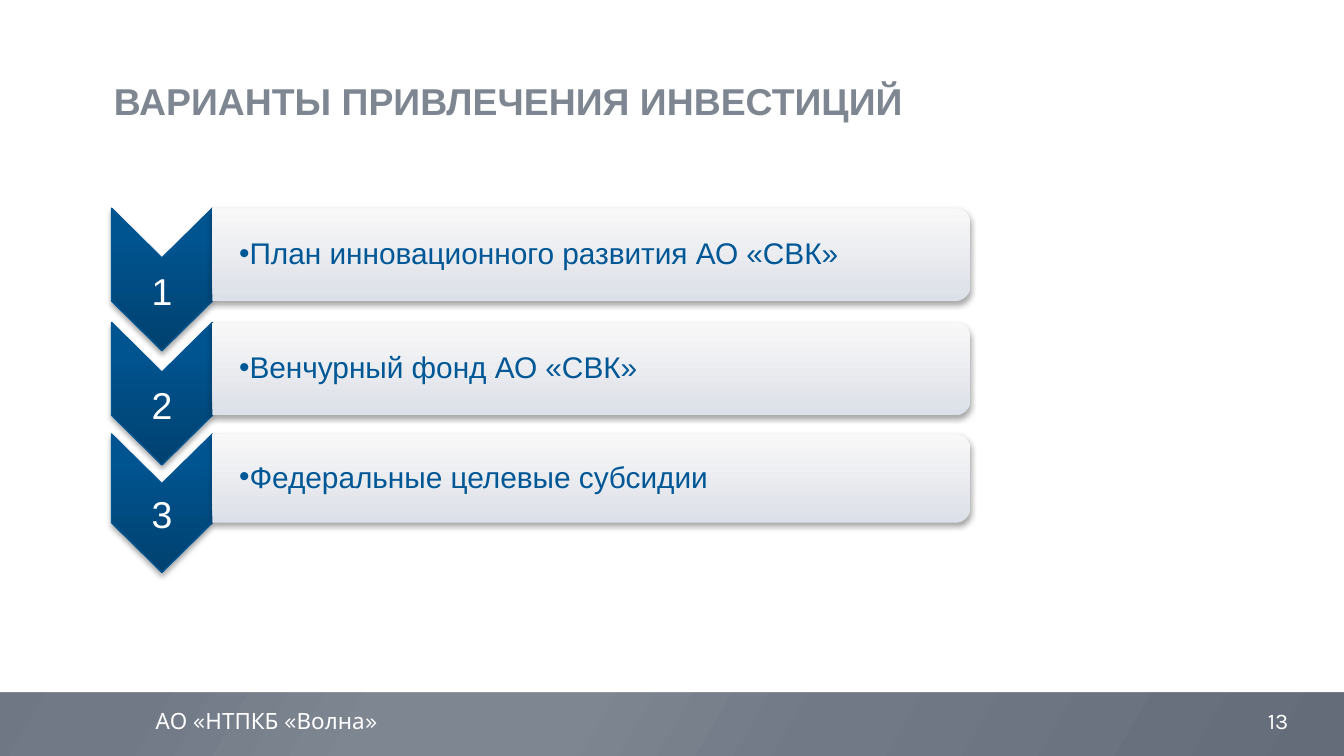
import math
from pptx import Presentation, util as u
from pptx.dml.color import RGBColor
from pptx.enum import shapes, text
from pptx.oxml import parse_xml, ns

# Content
TITLE = "ВАРИАНТЫ ПРИВЛЕЧЕНИЯ ИНВЕСТИЦИЙ"
FIRM = "АО «НТПКБ «Волна»"
PAGE = "13"
ROWS = [  # top, bar height, wording
    (1.55, 0.69, "План инновационного развития АО «СВК»"),
    (2.40, 0.69, "Венчурный фонд АО «СВК»"),
    (3.23, 0.66, "Федеральные целевые субсидии"),
]

# Look
BAND = [(0, "656C7E"), (30, "717986"), (45, "7E8692"),
        (55, "7E8692"), (70, "717986"), (100, "656C79")]
BLUE = [(0, "00416F"), (80, "005490"), (100, "005591")]
GREY = [(0, "DCE0E8"), (100, "F8F8F8")]
HEAD = dict(size=20, name="Arial", color="7E8692", bold=True)
FOOT = dict(size=12, name="Karla", color="FFFFFF")
NUM = dict(size=20, name="Arial", color="FFFFFF")
ITEM = dict(size=16, name="Arial", color="005795")
LEFT, MID, RIGHT = 0.83, 1.58, 7.22
TIP, CURVE = 0.37, 0.11
A = ns.nsdecls("a")

deck = Presentation()
deck.slide_width = u.Inches(10)
deck.slide_height = u.Inches(10 * 9 / 16)
slide = deck.slides.add_slide(deck.slide_layouts[6])


def rgb(code):
    return RGBColor.from_string(code)


def write(shape, words, form, anchor="TOP", align="LEFT", pads=(0.1, 0.05, 0.1, 0.05), bullet=False):
    frame = shape.text_frame
    frame.word_wrap = True
    frame.vertical_anchor = getattr(text.MSO_ANCHOR, anchor)
    for side, pad in zip(("left", "top", "right", "bottom"), pads):
        setattr(frame, "margin_" + side, u.Inches(pad))
    par = frame.paragraphs[0]
    par.alignment = getattr(text.PP_ALIGN, align)
    if bullet:
        par.level = 1
        prop = par._p.get_or_add_pPr()
        prop.set("marL", "0")
        prop.set("indent", str(u.Inches(-0.19)))
        prop.append(parse_xml(f'<a:buFont {A} typeface="Arial"/>'))
        prop.append(parse_xml(f'<a:buChar {A} char="•"/>'))
    run = par.add_run()
    run.text = words
    for key, val in form.items():
        if key == "color":
            run.font.color.rgb = rgb(val)
        else:
            setattr(run.font, key, u.Pt(val) if key == "size" else val)
    return par


def label(box, *args, **more):
    write(slide.shapes.add_textbox(*map(u.Inches, box)), *args, **more)


def shade(shape, stops, angle):
    marks = "".join(f'<a:gs pos="{pos * 1000}"><a:srgbClr val="{code}"/></a:gs>'
                    for pos, code in stops)
    shape._element.spPr.insert(2, parse_xml(
        f'<a:gradFill {A} rotWithShape="1"><a:gsLst>{marks}</a:gsLst>'
        f'<a:lin ang="{angle * 60000}" scaled="0"/></a:gradFill>'))


def panel(height):
    shape = slide.shapes.add_shape(shapes.MSO_SHAPE.RECTANGLE, 0, 0,
                                   deck.slide_width, height)
    shape.shadow.inherit = False
    shape.line.fill.background()
    return shape


def outline(points, stops, edge=None):
    start, *rest = [(u.Inches(x), u.Inches(y)) for x, y in points]
    pen = slide.shapes.build_freeform(*start)
    pen.add_line_segments(rest, close=True)
    shape = pen.convert_to_shape()
    if edge:
        shape.line.color.rgb = rgb(edge)
        shape.line.width = u.Pt(0.75)
    else:
        shape.line.fill.background()
    shade(shape, stops, 270)
    shape.shadow.inherit = False
    shape._element.spPr.find(ns.qn("a:effectLst")).append(parse_xml(
        f'<a:outerShdw {A} blurRad="{u.Pt(3.1)}" dist="{u.Pt(1.8)}" dir="5400000" rotWithShape="0">'
        '<a:srgbClr val="000000"><a:alpha val="35000"/></a:srgbClr></a:outerShdw>'))
    return shape


def arc(x, y, first):
    """Points of a quarter circle around x, y, starting at an angle in degrees."""
    turns = [math.radians(first + step) for step in range(0, 91, 10)]
    return [(x + CURVE * math.cos(t), y + CURVE * math.sin(t)) for t in turns]


# Backdrop: shaded slide with a white page above the footer band
shade(panel(deck.slide_height), BAND, 30)
sheet = panel(u.Inches(5.15))
sheet.fill.solid()
sheet.fill.fore_color.rgb = rgb("FFFFFF")

# Title and footer
label((0.75, 0.53, 7.87, 0.71), TITLE, HEAD)
label((1.06, 5.21, 2.33, 0.3), FIRM, FOOT)
label((9.02, 5.21, 0.98, 0.3), PAGE, FOOT, anchor="MIDDLE", align="CENTER")

# Numbered chevrons, each with its bar
for count, (top, high, words) in enumerate(ROWS, 1):
    low, centre = top + high, (LEFT + MID) / 2
    mark = outline([(MID, top), (MID, low), (centre, low + TIP), (LEFT, low),
                    (LEFT, top), (centre, top + TIP)], BLUE, "005592")
    par = write(mark, str(count), NUM, "MIDDLE", "CENTER", (0.04, 0.2, 0.04, 0))
    par.line_spacing = 0.9
    bar = outline([(MID, top)] + arc(RIGHT - CURVE, top + CURVE, -90)
                  + arc(RIGHT - CURVE, low - CURVE, 0) + [(MID, low)], GREY)
    par = write(bar, words, ITEM, "MIDDLE", pads=(0.2, 0.03, 0.03, 0.03), bullet=True)
    par.line_spacing = 0.9

deck.save("out.pptx")
